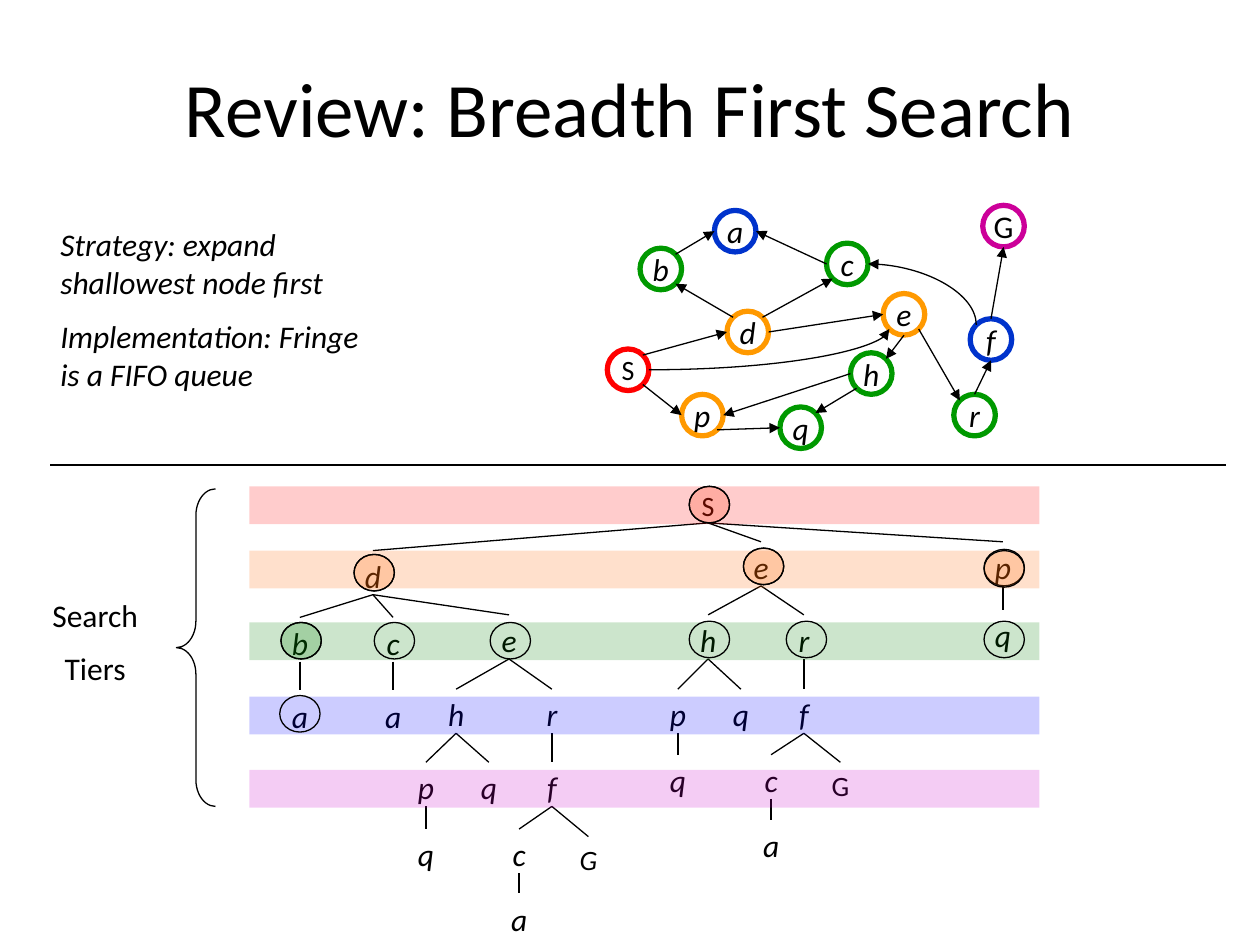
from dataclasses import dataclass
from math import cos, radians, sin

from lxml.etree import SubElement
from pptx import Presentation
from pptx.dml.color import RGBColor
from pptx.enum.shapes import MSO_CONNECTOR, MSO_SHAPE
from pptx.enum.text import MSO_ANCHOR, MSO_AUTO_SIZE, PP_ALIGN
from pptx.oxml.ns import qn
from pptx.util import Pt

SCALE = 9144
FONT = "Calibri"
COLORS = {
    "black": "000000", "start": "FF0000", "goal": "CC0099", "orange": "FF9900",
    "green": "009900", "blue": "0033CC", "tier_red": "FF0000", "tier_orange": "FF6600",
    "tier_green": "008000", "tier_blue": "0000FF", "tier_pink": "CC00CC",
    "visited_start": "FF3300",
}
CIRCLE = 33
GRAPH_NODES = {
    "S": (482, 277, "start"), "G": (780, 163, "goal"), "d": (577, 247, "orange"),
    "b": (508, 197, "green"), "p": (541, 313, "orange"), "q": (619, 323, "green"),
    "c": (656, 193, "green"), "e": (701, 233, "orange"), "h": (675, 280, "green"),
    "a": (567, 167, "blue"), "f": (770, 253, "blue"), "r": (757, 313, "green"),
}
ANGLES = {"right": 0, "bottom right": 45, "bottom": 90, "bottom left": 135,
          "left": 180, "top left": 225, "top": 270, "top right": 315}
GRAPH_EDGES = [
    ("S", "bottom right", "p", "left"), ("p", "bottom right", "q", "left"),
    ("h", "bottom left", "q", "top right"), ("h", "left", "p", "right"),
    ("e", "bottom", "h", "top right"), ("e", "bottom right", "r", "top left"),
    ("r", "top", "f", "bottom"), ("f", "top", "G", "bottom"),
    ("S", "top right", "d", "left"), ("d", "top left", "b", "bottom right"),
    ("b", "top right", "a", "left"), ("c", "left", "a", "right"),
    ("d", "top right", "c", "bottom left"), ("d", "right", "e", "left"),
]
TIERS = [(386, "tier_red"), (437, "tier_orange"), (494, "tier_green"),
         (553, "tier_blue"), (611, "tier_pink")]
EXPANDED = [(547, 386), (281, 440), (590, 435), (781, 436), (223, 494), (297, 494),
            (389, 494), (547, 493), (624, 493), (781, 493), (222, 552)]
VISITED = [(547, 386, "visited_start"), (281, 440, "tier_orange"),
           (590, 435, "tier_orange"), (781, 437, "tier_orange"), (223, 494, "tier_green")]


@dataclass
class Node:
    """A search tree node with its centre, top and children."""
    label: str
    center: int
    top: int
    children: tuple = ()
    italic: bool = True


TREE = Node("S", 562, 383, (
    Node("d", 296, 437, (
        Node("b", 238, 490, (Node("a", 238, 548),)),
        Node("c", 312, 490, (Node("a", 312, 548),)),
        Node("e", 404, 488, (
            Node("h", 362, 547, (
                Node("p", 338, 605, (Node("q", 338, 658),)),
                Node("q", 388, 605))),
            Node("r", 438, 547, (
                Node("f", 438, 605, (
                    Node("c", 412, 658, (Node("a", 412, 709),)),
                    Node("G", 467, 664))),)))))),
    Node("e", 604, 430, (
        Node("h", 562, 488, (
            Node("p", 538, 547, (Node("q", 538, 599),)),
            Node("q", 588, 547))),
        Node("r", 638, 488, (
            Node("f", 638, 547, (
                Node("c", 612, 599, (Node("a", 612, 651),)),
                Node("G", 667, 605, italic=False))),)))),
    Node("p", 796, 430, (Node("q", 796, 484),))), italic=False)


def px(*lengths):
    """Turn px lengths into a list of EMU."""
    return [round(length * SCALE) for length in lengths]


def color(name):
    """Look up a named colour."""
    return RGBColor.from_string(COLORS[name])


def format_text(text_frame, size, italic=False, align=PP_ALIGN.CENTER):
    """Format all paragraphs of a text frame alike."""
    for index, paragraph in enumerate(text_frame.paragraphs):
        paragraph.alignment = align
        if index:
            paragraph.space_before = Pt(9)
        for run in paragraph.runs:
            run.font.name = FONT
            run.font.size = Pt(size)
            run.font.italic = italic
            run.font.color.rgb = color("black")


def add_text(slide, box, text, size, italic=False, align=PP_ALIGN.CENTER):
    """Add a wrapping text box."""
    text_frame = slide.shapes.add_textbox(*px(*box)).text_frame
    text_frame.word_wrap = True
    text_frame.auto_size = MSO_AUTO_SIZE.SHAPE_TO_FIT_TEXT
    text_frame.text = text
    format_text(text_frame, size, italic, align)


def add_shape(slide, kind, box, fill=None, line=None, width=0.75):
    """Add a preset shape with an optional translucent fill and outline."""
    shape = slide.shapes.add_shape(kind, *px(*box))
    shape.shadow.inherit = False
    if fill:
        shape.fill.solid()
        shape.fill.fore_color.rgb = color(fill)
        fill_color = shape.fill._xPr.find(qn("a:solidFill"))[0]
        SubElement(fill_color, qn("a:alpha")).set("val", "20000")
    else:
        shape.fill.background()
    if line:
        shape.line.color.rgb = color(line)
        shape.line.width = Pt(width)
    else:
        shape.line.fill.background()
    return shape


def add_line(slide, start, end, arrow=None, curved=False):
    """Add a straight or curved connector, with an arrowhead at one end if asked."""
    kind = MSO_CONNECTOR.CURVE if curved else MSO_CONNECTOR.STRAIGHT
    connector = slide.shapes.add_connector(kind, *px(*start, *end))
    connector.line.color.rgb = color("black")
    connector.line.width = Pt(0.75)
    properties = connector._element.spPr
    if curved:
        properties.find(qn("a:prstGeom")).set("prst", "curvedConnector2")
    if arrow:
        SubElement(connector.line._get_or_add_ln(), qn(f"a:{arrow}")).set("type", "triangle")
    SubElement(properties, qn("a:effectLst"))


def graph_point(label, side):
    """Find the point on the rim of a graph node."""
    left, top, _ = GRAPH_NODES[label]
    angle = radians(ANGLES[side])
    radius = CIRCLE / 2
    return left + radius * (1 + cos(angle)), top + radius * (1 + sin(angle))


def add_graph(slide):
    """Draw the state graph."""
    for label, (left, top, line) in GRAPH_NODES.items():
        circle = add_shape(slide, MSO_SHAPE.FLOWCHART_CONNECTOR,
                           (left, top, CIRCLE, CIRCLE), line=line, width=3)
        text_frame = circle.text_frame
        text_frame.word_wrap = False
        text_frame.vertical_anchor = MSO_ANCHOR.MIDDLE
        text_frame.text = label
        format_text(text_frame, 16 if label == "S" else 18, label.islower())
    for source, source_side, target, target_side in GRAPH_EDGES:
        add_line(slide, graph_point(source, source_side),
                 graph_point(target, target_side), "tailEnd")
    add_line(slide, graph_point("c", "right"), graph_point("f", "top left"), "headEnd", True)
    add_line(slide, graph_point("S", "right"), graph_point("e", "bottom left"), "tailEnd", True)


def add_tree(slide, node):
    """Draw a node, its children and the lines between them."""
    width = {"S": 108, "G": 83}.get(node.label, 42)
    small = node.label.isupper()
    box = (node.center - width / 2, node.top, width, 37 if small else 40)
    add_text(slide, box, node.label, 16 if small else 18, node.italic)
    bottom = node.top + (32 if small else 35)
    for child in node.children:
        add_line(slide, (node.center, bottom), (child.center, child.top))
        add_tree(slide, child)


def add_tiers(slide):
    """Draw the tier bands, their brace and label, and the node rings."""
    for top, fill in TIERS:
        add_shape(slide, MSO_SHAPE.RECTANGLE, (198, top, 627, 30), fill)
    brace = add_shape(slide, MSO_SHAPE.LEFT_BRACE, (140, 388, 31, 252), line="black")
    brace.adjustments[0] = 0.68
    add_text(slide, (23, 468, 105, 85), "Search\nTiers", 18)
    for left, top, fill in [(*place, None) for place in EXPANDED] + VISITED:
        add_shape(slide, MSO_SHAPE.OVAL, (left, top, 32, 29), fill, "black")


def main():
    """Build and save the slide."""
    presentation = Presentation()
    presentation.slide_width, presentation.slide_height = px(1000, 750)
    slide = presentation.slides.add_slide(presentation.slide_layouts[5])
    title = slide.shapes.title
    title.left, title.top, title.width, title.height = px(50, 22, 900, 125)
    title.text_frame.text = "Review: Breadth First Search"
    title.text_frame.vertical_anchor = MSO_ANCHOR.MIDDLE
    format_text(title.text_frame, 44)
    add_tree(slide, TREE)
    add_graph(slide)
    add_tiers(slide)
    add_line(slide, (40, 369), (973, 369))
    add_text(slide, (38, 174, 259, 175),
             "Strategy: expand shallowest node first\nImplementation: Fringe is a FIFO queue",
             18, True, PP_ALIGN.LEFT)
    presentation.save("out.pptx")


if __name__ == "__main__":
    main()
